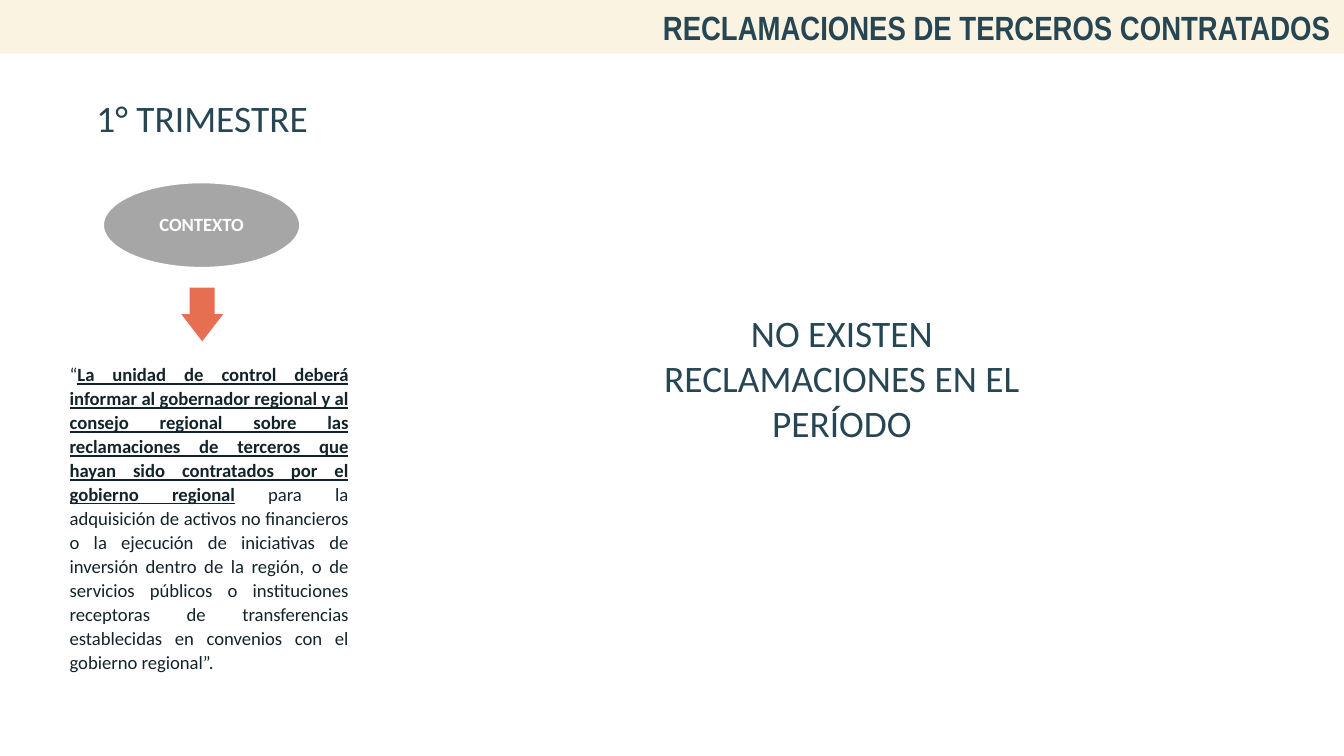
from pptx import Presentation
from pptx.dml.color import RGBColor
from pptx.enum.shapes import MSO_SHAPE
from pptx.enum.text import MSO_ANCHOR, PP_ALIGN
from pptx.util import Inches, Pt

RECT, OVAL, DOWN_ARROW = MSO_SHAPE.RECTANGLE, MSO_SHAPE.OVAL, MSO_SHAPE.DOWN_ARROW
CENTER, RIGHT, JUSTIFY = PP_ALIGN.CENTER, PP_ALIGN.RIGHT, PP_ALIGN.JUSTIFY
MIDDLE = MSO_ANCHOR.MIDDLE

COLORS = {
    "cream": "FBF3E1",
    "navy": "264653",
    "ink": "13232A",
    "coral": "E76F51",
    "gray": "A6A6A6",
    "white": "FFFFFF",
}


def rgb(name):
    return RGBColor.from_string(COLORS[name])


def format_run(r, size, color, font="Calibri", bold=False, underline=False):
    r.font.name = font
    r.font.size = Pt(size)
    r.font.color.rgb = rgb(color)
    r.font.bold = bold
    r.font.underline = underline


def add_filled_shape(s, kind, box, fill, line=None):
    sp = s.shapes.add_shape(kind, *map(Inches, box))
    sp.shadow.inherit = False
    sp.fill.solid()
    sp.fill.fore_color.rgb = rgb(fill)
    if line:
        sp.line.color.rgb = rgb(line)
        sp.line.width = Pt(2)
    else:
        sp.line.fill.background()
    return sp


def set_label(sp, text, align, size, color, font="Calibri", bold=False):
    tf = sp.text_frame
    tf.word_wrap = True
    tf.text = text
    p = tf.paragraphs[0]
    p.alignment = align
    format_run(p.runs[0], size, color, font, bold)
    return tf


def add_heading(s, box, text):
    sp = s.shapes.add_textbox(*map(Inches, box))
    set_label(sp, text, CENTER, 20, "navy")


def add_quote(s, box, parts):
    tf = s.shapes.add_textbox(*map(Inches, box)).text_frame
    tf.word_wrap = True
    p = tf.paragraphs[0]
    p.alignment = JUSTIFY
    p.line_spacing = 1.07
    for text, strong in parts:
        r = p.add_run()
        r.text = text
        format_run(r, 10, "ink", bold=strong, underline=strong)


def main():
    prs = Presentation()
    prs.slide_width = Inches(10)
    prs.slide_height = prs.slide_width * 9 // 16
    s = prs.slides.add_slide(prs.slide_layouts[6])

    banner = add_filled_shape(s, RECT, (0, 0, 10, 0.4), "cream")
    tf = set_label(banner, "RECLAMACIONES DE TERCEROS CONTRATADOS", RIGHT, 18,
                   "navy", "Arial Narrow", True)
    tf.vertical_anchor = MIDDLE

    add_heading(s, (-0.13, 0.66, 3.27, 0.44), "1° TRIMESTRE")

    arrow = add_filled_shape(s, DOWN_ARROW, (1.35, 2.14, 0.31, 0.4), "coral")
    arrow.adjustments[0] = 0.6
    arrow.adjustments[1] = 0.65

    context = add_filled_shape(s, OVAL, (0.76, 1.35, 1.48, 0.65), "gray", "white")
    tf = set_label(context, "CONTEXTO", CENTER, 10, "white", bold=True)
    tf.vertical_anchor = MIDDLE
    tf.margin_left = tf.margin_right = tf.margin_top = tf.margin_bottom = 0
    tf.paragraphs[0].line_spacing = 0.9

    add_quote(s, (0.42, 2.64, 2.27, 2.62), [
        ("“", False),
        ("La unidad de control deberá informar al gobernador regional y al "
         "consejo regional sobre las reclamaciones de terceros que hayan sido "
         "contratados por el gobierno regional", True),
        (" para la adquisición de activos no financieros o la ejecución de "
         "iniciativas de inversión dentro de la región, o de servicios públicos "
         "o instituciones receptoras de transferencias establecidas en "
         "convenios con el gobierno regional”.", False),
    ])

    add_heading(s, (4.63, 2.26, 3.27, 1.11), "NO EXISTEN RECLAMACIONES EN EL PERÍODO")

    prs.save("out.pptx")


if __name__ == "__main__":
    main()
